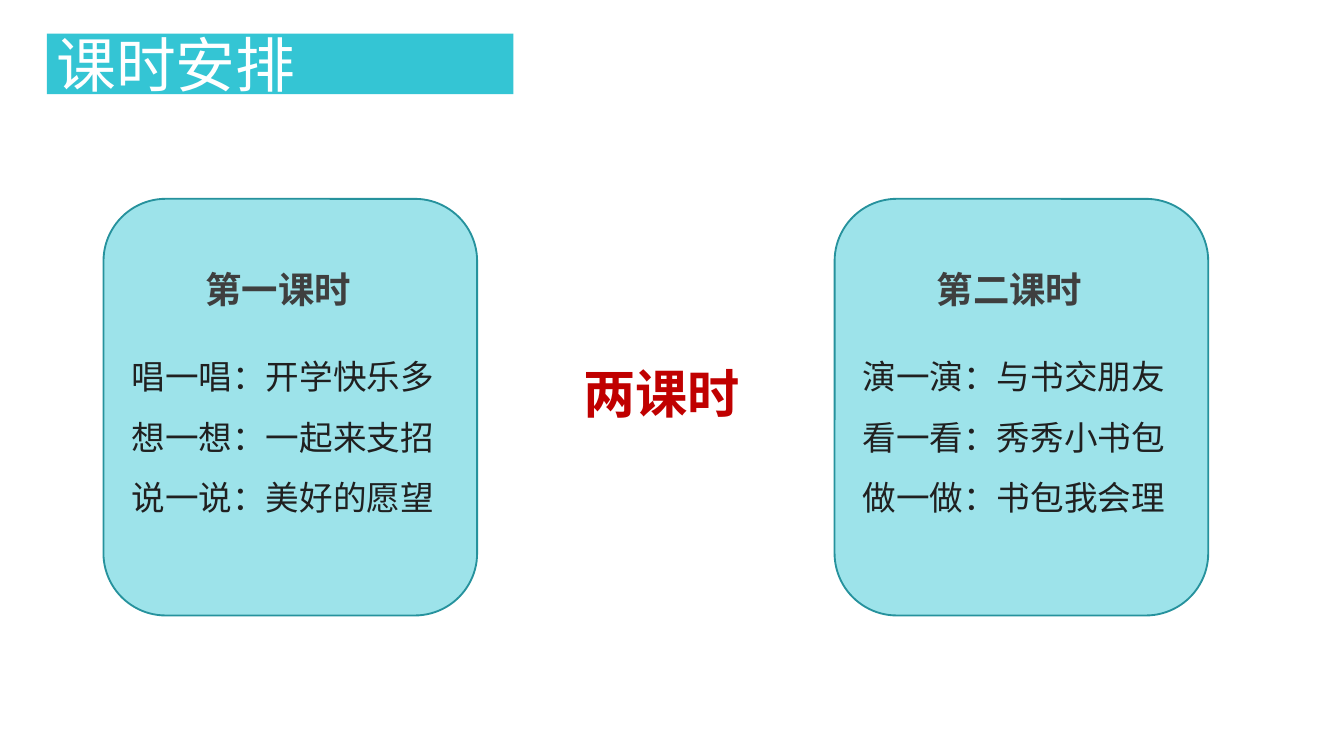
from lxml import etree
from pptx import Presentation, util as u
from pptx.dml.color import RGBColor
from pptx.enum import shapes, text
from pptx.oxml.ns import qn

TEAL = RGBColor(0x34, 0xC5, 0xD4)
EDGE = RGBColor(0x26, 0x92, 0x9D)
RED = RGBColor(0xC0, 0x00, 0x00)
WHITE = RGBColor(0xFF, 0xFF, 0xFF)
GRAY = RGBColor(0x3F, 0x3F, 0x3F)
INK = RGBColor(0x20, 0x20, 0x20)
CJK = "Noto Sans CJK SC"

WIDTH = 10
HEIGHT = WIDTH * 9 / 16
TITLE = "课时安排"
CENTER = "两课时"
LESSONS = [
    ("第一课时", ["唱一唱：开学快乐多", "想一想：一起来支招", "说一说：美好的愿望"]),
    ("第二课时", ["演一演：与书交朋友", "看一看：秀秀小书包", "做一做：书包我会理"]),
]
CARD_LEFT, CARD_TOP, CARD_W, CARD_H = 0.77, 1.48, 2.78, 3.1
CARD_STEP = 5.44
TIGHT = {"margin_left": 0.07, "margin_right": 0.07, "margin_top": 0.04, "margin_bottom": 0.04}

TITLE_FONT = {"name": "Arial", "size": u.Pt(32)}
CENTER_FONT = {"name": CJK, "size": u.Pt(28), "bold": True}
HEAD_FONT = {"name": CJK, "size": u.Pt(19.5), "bold": True}
BODY_FONT = {"name": CJK, "size": u.Pt(18)}


def inches(*values):
    return [u.Inches(v) for v in values]


def write(sp, lines, font, color, spacing=None, margins=None, wrap=True):
    tf = sp.text_frame
    tf.word_wrap = wrap
    for name, value in (margins or {}).items():
        setattr(tf, name, u.Inches(value))
    for i, line in enumerate(lines):
        p = tf.add_paragraph() if i else tf.paragraphs[0]
        p.alignment = text.PP_ALIGN.LEFT
        if spacing:
            p.line_spacing = spacing
        r = p.add_run()
        r.text = line
        for name, value in font.items():
            setattr(r.font, name, value)
        r.font.color.rgb = color
        r.font._element.find(qn("a:latin")).addnext(
            etree.Element(qn("a:ea"), typeface=CJK))


def add_box(s, kind, box):
    sp = s.shapes.add_shape(kind, *inches(*box))
    sp.shadow.inherit = False
    sp.fill.solid()
    sp.fill.fore_color.rgb = TEAL
    return sp


def add_card(s, left):
    sp = add_box(s, shapes.MSO_SHAPE.ROUNDED_RECTANGLE, (left, CARD_TOP, CARD_W, CARD_H))
    color = sp._element.spPr.find(qn("a:solidFill"))[0]
    etree.SubElement(color, qn("a:alpha"), val="48000")
    sp.line.color.rgb = EDGE
    sp.line.width = u.Pt(1)


def add_text(s, box, lines, font, color, **layout):
    write(s.shapes.add_textbox(*inches(*box)), lines, font, color, **layout)


def main():
    prs = Presentation()
    prs.slide_width, prs.slide_height = inches(WIDTH, HEIGHT)
    s = prs.slides.add_slide(prs.slide_layouts[6])

    banner = add_box(s, shapes.MSO_SHAPE.RECTANGLE, (0.35, 0.25, 3.47, 0.45))
    banner.line.fill.background()
    banner.text_frame.vertical_anchor = text.MSO_ANCHOR.MIDDLE
    write(banner, [TITLE], TITLE_FONT, WHITE, margins=TIGHT)

    add_text(s, (4.27, 2.65, 1.32, 0.55), [CENTER], CENTER_FONT, RED,
             margins=TIGHT, wrap=False)

    for i, (heading, activities) in enumerate(LESSONS):
        left = CARD_LEFT + i * CARD_STEP
        add_card(s, left)
        add_text(s, (left + 0.66, 1.94, 1.65, 0.43), [heading], HEAD_FONT, GRAY)
        add_text(s, (left + 0.11, 2.45, 3.64, 1.46), activities, BODY_FONT, INK, spacing=1.5)

    prs.save("out.pptx")


if __name__ == "__main__":
    main()
